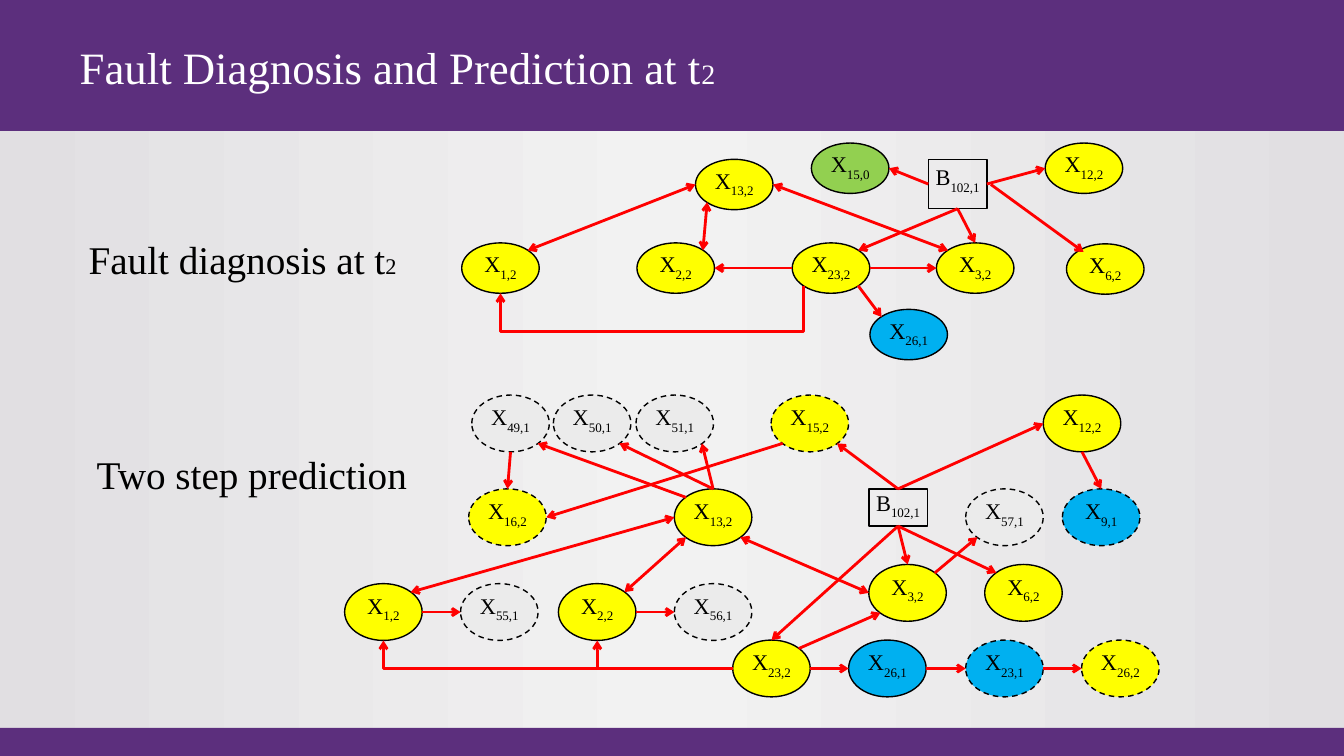
"""Build the slide on fault diagnosis and prediction at t2."""
from copy import deepcopy
from dataclasses import dataclass, field

from lxml.etree import SubElement
from pptx import Presentation
from pptx.dml.color import RGBColor
from pptx.enum.dml import MSO_LINE
from pptx.enum.shapes import MSO_CONNECTOR, MSO_SHAPE
from pptx.enum.text import MSO_ANCHOR, PP_ALIGN
from pptx.oxml.ns import qn
from pptx.util import Pt


@dataclass
class Theme:
    font: str = "Times New Roman"
    purple: str = "5C2F7D"
    white: str = "FFFFFF"
    black: str = "000000"
    red: str = "FF0000"
    backdrop: tuple = ("E1DFE2", "F2F2F2", "E1DFE2")
    title: tuple = (32, 20)
    heading: tuple = (28, 16)
    node: int = 16
    outline: float = 1
    arrow: float = 2
    kinds: dict = field(default_factory=lambda: {
        "yellow": ("FFFF00", False),
        "yellow dashed": ("FFFF00", True),
        "blue": ("00B0F0", False),
        "blue dashed": ("00B0F0", True),
        "green": ("92D050", False),
        "grey dashed": ("EBEBEB", True),
        "box": (None, False),
    })


class Diagram:
    def __init__(self, slide, theme):
        self.slide, self.theme = slide, theme
        self.nodes = {}

    def backdrop(self):
        fill = self.slide.background.fill
        fill.gradient()
        fill.gradient_angle = 0
        first = fill.gradient_stops[0]._gs
        first.addnext(deepcopy(first))
        for place, (stop, color) in enumerate(zip(fill.gradient_stops, self.theme.backdrop)):
            stop.color.rgb = RGBColor.from_string(color)
            stop.position = place / 2

    def bar(self, top, height):
        band = self.slide.shapes.add_shape(MSO_SHAPE.RECTANGLE, 0, Pt(top), Pt(960), Pt(height))
        band.shadow.inherit = False
        band.fill.solid()
        band.fill.fore_color.rgb = RGBColor.from_string(self.theme.purple)
        band.line.fill.background()
        self.slide.shapes._spTree.insert(2, band._element)

    def style_run(self, run, size, color):
        run.font.name = self.theme.font
        run.font.size = Pt(size)
        run.font.color.rgb = RGBColor.from_string(color)

    def set_parts(self, frame, parts, sizes, color, align):
        paragraph = frame.paragraphs[0]
        paragraph.alignment = align
        frame.word_wrap = True
        frame.vertical_anchor = MSO_ANCHOR.TOP
        for part, size in zip(parts, sizes):
            run = paragraph.add_run()
            run.text = part
            self.style_run(run, size, color)
        return paragraph.runs

    def title(self, left, top, width, height, *parts):
        heading = self.slide.shapes.title
        heading.left, heading.top, heading.width, heading.height = map(Pt, (left, top, width, height))
        self.set_parts(heading.text_frame, parts, self.theme.title, self.theme.white, PP_ALIGN.LEFT)

    def heading(self, left, top, width, height, *parts):
        label = self.slide.shapes.add_textbox(*map(Pt, (left, top, width, height)))
        self.set_parts(label.text_frame, parts, self.theme.heading, self.theme.black, PP_ALIGN.LEFT)

    def node(self, label, kind, left, top, width, height, inset=0):
        fill, dashed = self.theme.kinds[kind]
        outline = MSO_SHAPE.OVAL if fill else MSO_SHAPE.RECTANGLE
        event = self.slide.shapes.add_shape(outline, *map(Pt, (left, top, width, height)))
        event.shadow.inherit = False
        if fill:
            event.fill.solid()
            event.fill.fore_color.rgb = RGBColor.from_string(fill)
        else:
            event.fill.background()
        event.line.color.rgb = RGBColor.from_string(self.theme.black)
        event.line.width = Pt(self.theme.outline)
        if dashed:
            event.line.dash_style = MSO_LINE.DASH
        frame = event.text_frame
        frame.margin_left = frame.margin_right = frame.margin_bottom = 0
        frame.margin_top = Pt(inset)
        parts = (label[0], label[1:])
        runs = self.set_parts(frame, parts, [self.theme.node] * 2, self.theme.black, PP_ALIGN.CENTER)
        runs[1]._r.get_or_add_rPr().set("baseline", "-30000")
        self.nodes[label] = (left, top, width, height)

    def site(self, name):
        label, _, side = name.rpartition(".")
        left, top, width, height = self.nodes[label]
        reach = 0.5 if len(side) == 1 else 0.35
        across = ("E" in side) - ("W" in side)
        down = ("S" in side) - ("N" in side)
        return left + width * (0.5 + reach * across), top + height * (0.5 + reach * down)

    def arrow(self, start, end, double=False, kind=MSO_CONNECTOR.STRAIGHT):
        link = self.slide.shapes.add_connector(kind, *map(Pt, (*start, *end)))
        link.line.color.rgb = RGBColor.from_string(self.theme.red)
        link.line.width = Pt(self.theme.arrow)
        line = link.line._get_or_add_ln()
        for tag in ("a:headEnd", "a:tailEnd") if double else ("a:tailEnd",):
            SubElement(line, qn(tag), type="arrow")
        SubElement(link._element.spPr, qn("a:effectLst"))
        return link

    def links(self, routes):
        for route in routes:
            start, direction, end = route.split()
            self.arrow(self.site(start), self.site(end), direction == "<>")

    def elbow(self, start, end, floor=None):
        (x1, y1), (x2, y2) = self.site(start), self.site(end)
        if floor is None:
            link = self.arrow((x2, y2), (x1, y1), kind=MSO_CONNECTOR.ELBOW)
            preset, turn = "bentConnector2", 180
        else:
            middle_x, middle_y = (x1 + x2) / 2, (y1 + y2) / 2
            half_width, half_height = (y2 - y1) / 2, (x1 - x2) / 2
            link = self.arrow((middle_x - half_width, middle_y - half_height),
                              (middle_x + half_width, middle_y + half_height),
                              kind=MSO_CONNECTOR.ELBOW)
            preset, turn = "bentConnector3", 90
        properties = link._element.spPr
        properties.find(qn("a:xfrm")).set("rot", str(turn * 60000))
        geometry = properties.find(qn("a:prstGeom"))
        geometry.set("prst", preset)
        if floor is not None:
            bend = round((floor - y1) / (y2 - y1) * 100000)
            SubElement(geometry.find(qn("a:avLst")), qn("a:gd"), name="adj1", fmla=f"val {bend}")


def main():
    deck = Presentation()
    deck.slide_width, deck.slide_height = Pt(960), Pt(540)
    slide = deck.slides.add_slide(deck.slide_layouts[5])
    theme = Theme()
    diagnosis = Diagram(slide, theme)
    diagnosis.backdrop()
    diagnosis.bar(0, 93.6)
    diagnosis.bar(520, 20)
    diagnosis.title(49.7, 24.5, 505.4, 46, "Fault Diagnosis and Prediction at t", "2")
    diagnosis.heading(56.2, 164.9, 278, 41, "Fault diagnosis at t", "2")
    for label, kind, left, top in (
            ("X13,2", "yellow", 496.8, 113.8), ("X15,0", "green", 579.6, 102.2),
            ("X12,2", "yellow", 746.6, 102.2), ("X1,2", "yellow", 329.8, 173.5),
            ("X2,2", "yellow", 455, 173.5), ("X23,2", "yellow", 565.9, 173.5),
            ("X3,2", "yellow", 668.9, 173.5), ("X6,2", "yellow", 761.8, 174.2),
            ("X26,1", "blue", 621.4, 221)):
        diagnosis.node(label, kind, left, top, 55.4, 36)
    diagnosis.node("B102,1", "box", 663.1, 113.8, 41.8, 35.3, inset=2.9)
    diagnosis.links((
        "B102,1.W > X15,0.E", "B102,1.E > X12,2.W", "B102,1.S > X23,2.NE", "B102,1.S > X3,2.N",
        "X23,2.E > X3,2.W", "X23,2.W > X2,2.E", "X23,2.SE > X26,1.NW",
        "X2,2.NE <> X13,2.SW", "X3,2.NW <> X13,2.E", "X1,2.NE <> X13,2.W"))
    diagnosis.arrow((707.8, 131.8), (774, 180))
    diagnosis.elbow("X23,2.SW", "X1,2.S", floor=236.9)

    prediction = Diagram(slide, theme)
    prediction.heading(61.9, 318.2, 239, 41, "Two step prediction")
    for top, row in (
            (282.2, (("X49,1", "grey dashed", 337), ("X50,1", "grey dashed", 395.3),
                     ("X51,1", "grey dashed", 454.3), ("X15,2", "yellow dashed", 550.8),
                     ("X12,2", "yellow", 745.2))),
            (349.2, (("X16,2", "yellow dashed", 334.8), ("X13,2", "yellow", 481.7),
                     ("X57,1", "grey dashed", 689.8), ("X9,1", "blue dashed", 758.9))),
            (403.2, (("X3,2", "yellow", 620.6), ("X6,2", "yellow", 703.4))),
            (416.9, (("X1,2", "yellow", 246.2), ("X55,1", "grey dashed", 329),
                     ("X2,2", "yellow", 398.9), ("X56,1", "grey dashed", 481.7))),
            (457.2, (("X23,2", "yellow", 523.4), ("X26,1", "blue", 606.2),
                     ("X23,1", "blue dashed", 689.8), ("X26,2", "yellow dashed", 772.6)))):
        for label, kind, left in row:
            prediction.node(label, kind, left, top, 55.4, 40.6)
    prediction.node("B102,1", "box", 620.6, 349.2, 41.8, 26.6)
    prediction.links((
        "B102,1.N > X15,2.SE", "B102,1.N > X12,2.W", "B102,1.S > X23,2.N", "B102,1.S > X6,2.NW",
        "B102,1.S > X3,2.N", "X23,2.NE > X3,2.SW", "X23,2.E > X26,1.W", "X26,1.E > X23,1.W",
        "X23,1.E > X26,2.W", "X2,2.NE <> X13,2.SW", "X3,2.W <> X13,2.SE", "X1,2.NE <> X13,2.W",
        "X13,2.N > X51,1.SE", "X13,2.N > X50,1.SE", "X13,2.NW > X49,1.SE", "X1,2.E > X55,1.W",
        "X2,2.E > X56,1.W", "X3,2.NE > X57,1.SW", "X12,2.S > X9,1.N", "X49,1.S > X16,2.N",
        "X15,2.SW > X16,2.E"))
    for effect in ("X1,2.S", "X2,2.S"):
        prediction.elbow("X23,2.W", effect)
    deck.save("out.pptx")


if __name__ == "__main__":
    main()
